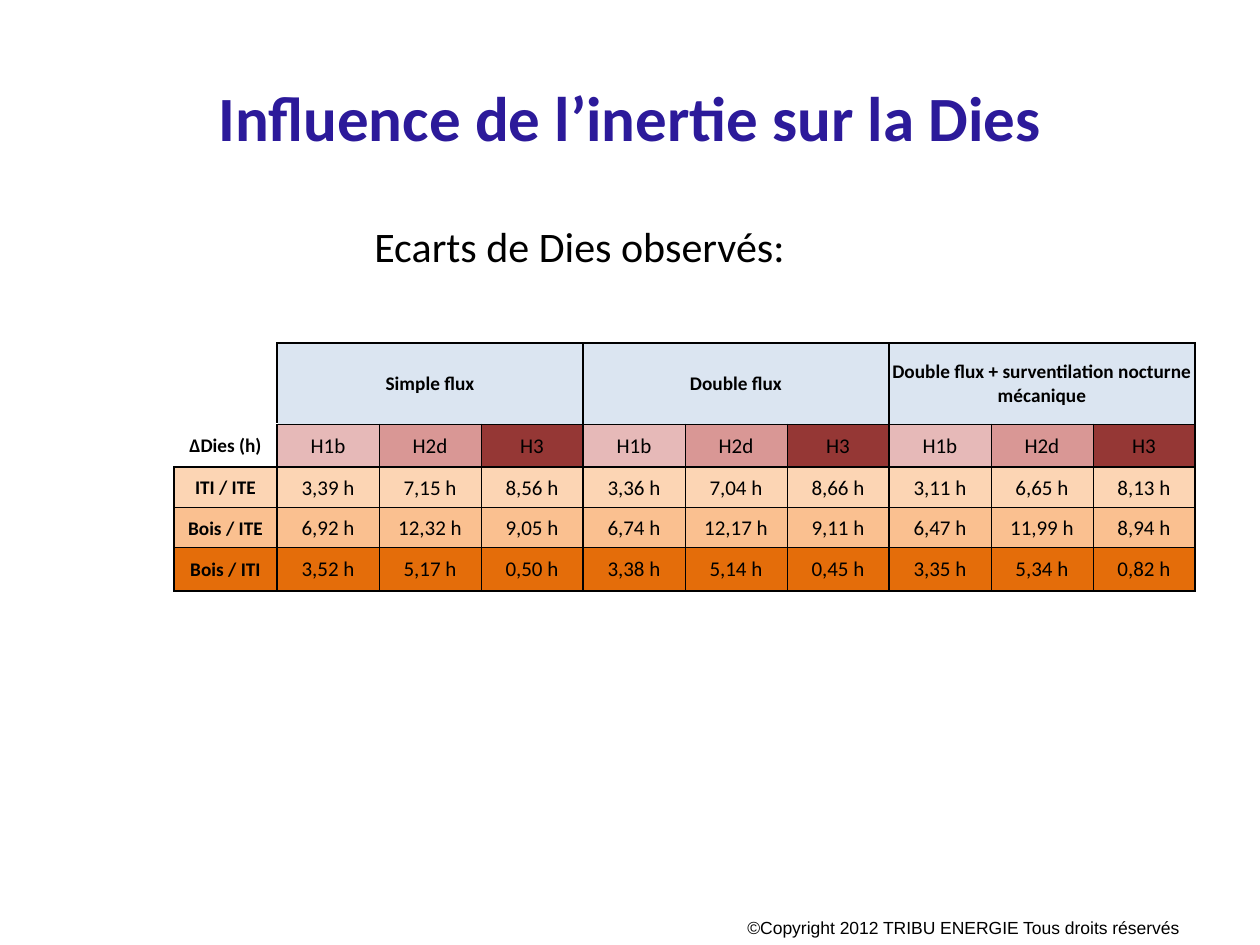
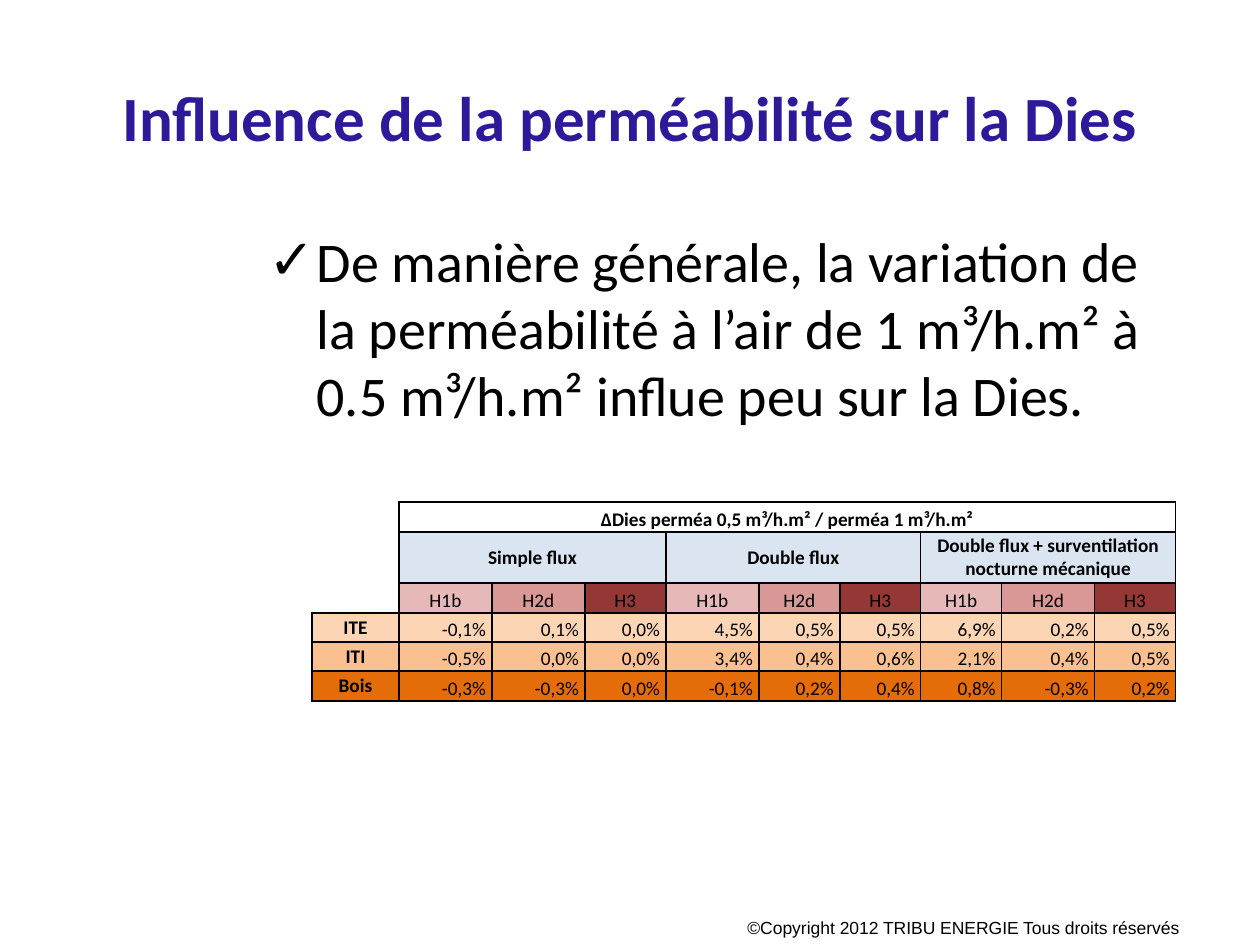
from lxml import etree
from pptx import Presentation
from pptx.dml.color import RGBColor
from pptx.enum.text import MSO_ANCHOR, MSO_AUTO_SIZE, PP_ALIGN
from pptx.oxml.ns import qn
from pptx.util import Inches, Pt

CENTER, LEFT, RIGHT = PP_ALIGN.CENTER, PP_ALIGN.LEFT, PP_ALIGN.RIGHT
TOP, MIDDLE, BOTTOM = MSO_ANCHOR.TOP, MSO_ANCHOR.MIDDLE, MSO_ANCHOR.BOTTOM
NO_FIT = MSO_AUTO_SIZE.NONE

BLACK = RGBColor(0x00, 0x00, 0x00)
INDIGO = RGBColor(0x2C, 0x1A, 0x9A)
FLUX = RGBColor(0xDB, 0xE5, 0xF1)
ZONES = [RGBColor(0xE6, 0xB9, 0xB8), RGBColor(0xD9, 0x97, 0x95), RGBColor(0x95, 0x37, 0x35)]
WALLS = [RGBColor(0xFC, 0xD5, 0xB4), RGBColor(0xFA, 0xC0, 0x90), RGBColor(0xE4, 0x6D, 0x0A)]

FLUX_NAMES = ["Simple flux", "Double flux", "Double flux + surventilation nocturne mécanique"]
ZONE_NAMES = ["H1b", "H2d", "H3"] * 3
COPYRIGHT = "©Copyright 2012 TRIBU ENERGIE Tous droits réservés"
PX = Inches(1) / 126


def px(length):
    return round(length * PX)


def assign(target, values):
    for name, value in values.items():
        setattr(target, name, value)


class Deck:
    def __init__(self):
        self.prs = Presentation()
        assign(self.prs, {"slide_width": px(1260), "slide_height": px(945)})
        self.slide = None

    def start(self, layout, heading):
        self.slide = self.prs.slides.add_slide(self.prs.slide_layouts[layout])
        self.text((735, 911, 525, 34), COPYRIGHT, 10, font="Arial")
        self.text((63, 38, 1134, 157), heading, 36, holder=self.slide.shapes.title,
                  color=INDIGO, bold=True, align=CENTER, anchor=MIDDLE)

    def text(self, place, words, size, holder=None, bullet=None, anchor=TOP, **style):
        left, top, width, height = map(px, place)
        box = holder or self.slide.shapes.add_textbox(left, top, width, height)
        assign(box, {"left": left, "top": top, "width": width, "height": height})
        assign(box.text_frame, {"word_wrap": True, "auto_size": NO_FIT, "vertical_anchor": anchor})
        paragraph = box.text_frame.paragraphs[0]
        if bullet:
            props = paragraph._p.get_or_add_pPr()
            props.set("marL", str(px(48)))
            props.set("indent", str(-px(48)))
            etree.SubElement(props, qn("a:buChar"), char=bullet)
        self.fill_line(paragraph, words, size, **style)

    def fill_line(self, paragraph, words, size, font="Calibri", color=BLACK, bold=False, align=LEFT):
        assign(paragraph, {"alignment": align, "space_before": Pt(0)})
        if not words:
            etree.SubElement(paragraph._p, qn("a:endParaRPr"), sz=str(size * 100))
            return
        run = paragraph.add_run()
        run.text = words
        assign(run.font, {"name": font, "size": Pt(size), "bold": bold})
        run.font.color.rgb = color

    def borders(self, cell, widths):
        props = cell._tc.get_or_add_tcPr()
        for side in "LRTB":
            if side in widths:
                line = etree.SubElement(props, qn(f"a:ln{side}"), w=str(Pt(widths[side])))
                paint = etree.SubElement(line, qn("a:solidFill"))
                etree.SubElement(paint, qn("a:srgbClr"), val=str(BLACK))

    def table(self, corner, columns, heights, head, body, look):
        left, top = corner
        frame = self.slide.shapes.add_table(
            len(heights), len(columns), px(left), px(top), px(sum(columns)), px(sum(heights)))
        grid = frame.table
        assign(grid, {"first_row": False, "horz_banding": False})
        for column, width in zip(grid.columns, columns):
            column.width = px(width)
        for row, height in zip(grid.rows, heights):
            row.height = px(height)
        for r, (label, entries) in enumerate(head + body):
            in_head = r < len(head)
            span = 9 // len(entries)
            texts = {0: label, **{1 + i * span: entry for i, entry in enumerate(entries)}}
            for c in range(len(columns)):
                cell = grid.cell(r, c)
                assign(cell, {"margin_left": px(look["side"]), "margin_right": px(look["side"]),
                              "margin_top": px(look["upper"]), "margin_bottom": 0,
                              "vertical_anchor": MIDDLE if c == 0 or span == 3 else look["anchor"]})
                strong = c == 0 or span > 1
                self.fill_line(cell.text_frame.paragraphs[0], texts.get(c, ""),
                               11 if strong else look["size"], bold=strong,
                               align=CENTER if in_head or c == 0 else look["align"])
                if c not in texts:
                    continue
                thick = {"L": c == 0 or c % 3 == 1, "R": c % 3 == 0 or span > 1,
                         "T": r in (0, len(head)),
                         "B": r in (len(head) - 1, len(heights) - 1)}
                widths = {side: 1 if on else look["thin"] for side, on in thick.items()}
                if c == 0 and in_head:
                    kept = "RB" if r == len(head) - 1 else "R"
                    widths = {side: widths[side] for side in kept}
                self.borders(cell, widths)
                if not in_head:
                    fill = WALLS[r - len(head)]
                elif c == 0 or span == 9:
                    fill = None
                else:
                    fill = FLUX if span == 3 else ZONES[(c - 1) % 3]
                if fill is None:
                    cell.fill.background()
                else:
                    cell.fill.solid()
                    cell.fill.fore_color.rgb = fill
                if c and span > 1:
                    cell.merge(grid.cell(r, c + span - 1))


def series(label, values, unit):
    return label, [value + unit for value in values.split()]


def inertia(deck):
    deck.start(5, "Influence de l’inertie sur la Dies")
    deck.text((362, 214, 843, 369), "Ecarts de Dies observés:", 24)
    head = [("", FLUX_NAMES), ("ΔDies (h)", ZONE_NAMES)]
    gaps = [
        series("ITI / ITE", "3,39 7,15 8,56 3,36 7,04 8,66 3,11 6,65 8,13", " h"),
        series("Bois / ITE", "6,92 12,32 9,05 6,74 12,17 9,11 6,47 11,99 8,94", " h"),
        series("Bois / ITI", "3,52 5,17 0,50 3,38 5,14 0,45 3,35 5,34 0,82", " h"),
    ]
    look = {"size": 12, "side": 1, "upper": 1, "anchor": MIDDLE, "align": CENTER, "thin": 0.5}
    deck.table((174, 343), [103] + [102] * 9, [81, 43, 41, 40, 43], head, gaps, look)


def permeability(deck):
    deck.start(1, "Influence de la perméabilité sur la Dies")
    deck.text((256, 220, 941, 222),
              "De manière générale, la variation de la perméabilité à l’air "
              "de 1 m³/h.m² à 0.5 m³/h.m² influe peu sur la Dies.",
              32, holder=deck.slide.placeholders[1], bullet="✓")
    head = [("", ["ΔDies perméa 0,5 m³/h.m² / perméa 1 m³/h.m²"]),
            ("", FLUX_NAMES), ("", ZONE_NAMES)]
    changes = [
        series("ITE", "-0,1 0,1 0,0 4,5 0,5 0,5 6,9 0,2 0,5", "%"),
        series("ITI", "-0,5 0,0 0,0 3,4 0,4 0,6 2,1 0,4 0,5", "%"),
        series("Bois", "-0,3 -0,3 0,0 -0,1 0,2 0,4 0,8 -0,3 0,2", "%"),
    ]
    look = {"size": 11, "side": 6, "upper": 0, "anchor": BOTTOM, "align": RIGHT, "thin": 1}
    columns = [87, 93, 93, 81, 93, 81, 81, 81, 93, 81]
    deck.table((312, 502), columns, [30, 51, 30, 29, 29, 30], head, changes, look)


def main():
    deck = Deck()
    inertia(deck)
    permeability(deck)
    deck.prs.save("out.pptx")


if __name__ == "__main__":
    main()
